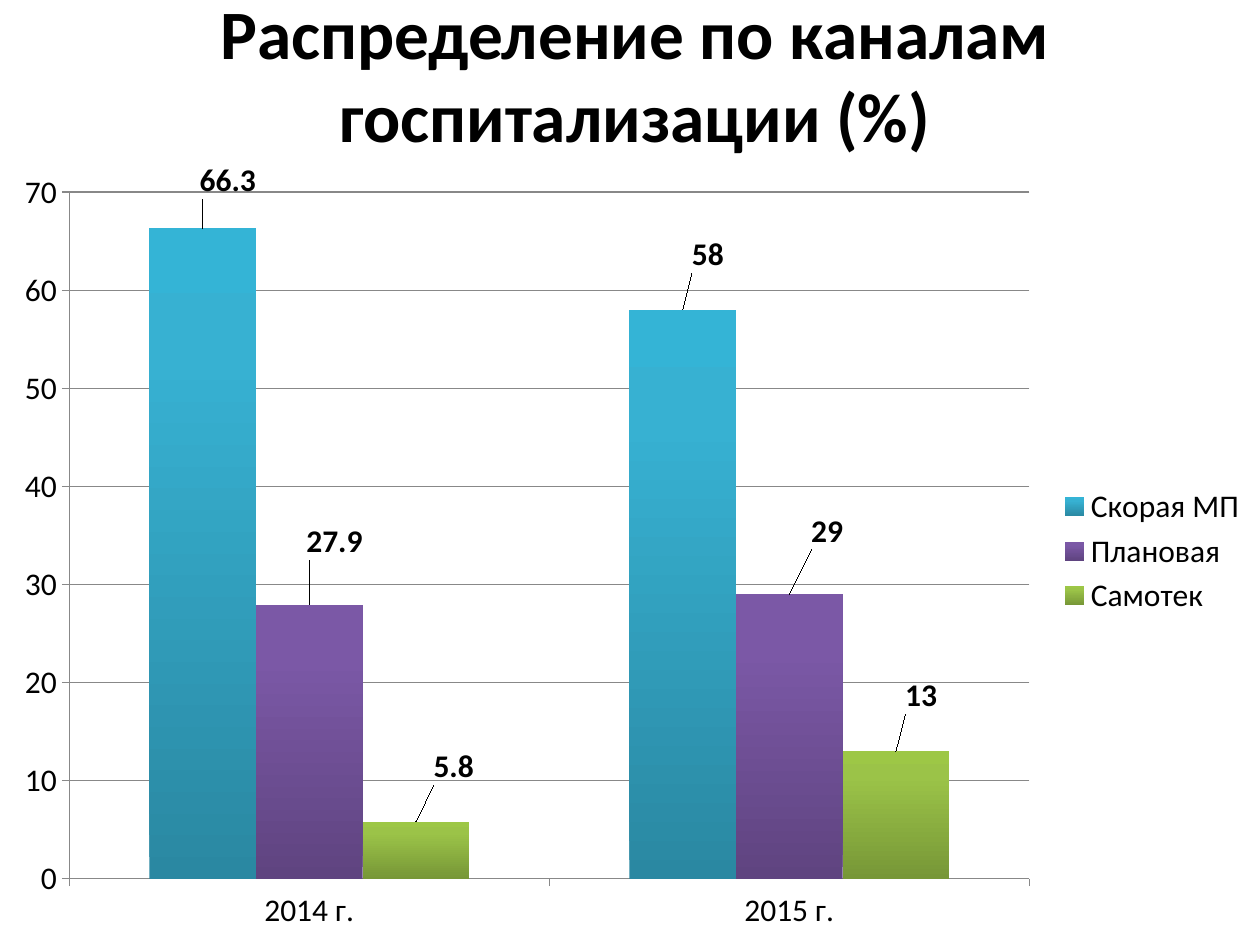
"""Build a slide with a clustered column chart of hospital admission channels."""
import copy
import pptx
import pptx.util
import pptx.chart.data
import pptx.dml.color
import pptx.enum.chart
import pptx.enum.text
import pptx.oxml
import pptx.oxml.ns

WIDE, HIGH = 10, 7.5
FONT = "Calibri"
TITLE = "Распределение по каналам госпитализации (%)"
YEARS = ["2014 г.", "2015 г."]
STOPS = [0, 0.8, 1]
SERIES = [
    {"name": "Скорая МП", "vals": [66.3, 58],
     "fill": ["2A88A2", "37B1D2", "34B4D6"],
     "shift": [(0.02, -0.03), (0.02, -0.04)]},
    {"name": "Плановая", "vals": [27.9, 29],
     "fill": ["5F4480", "7B58A6", "7C57A8"],
     "shift": [(0.02, -0.05), (0.03, -0.05)]},
    {"name": "Самотек", "vals": [5.8, 13],
     "fill": ["779737", "9BC348", "9DC746"],
     "shift": [(0.03, -0.04), (0.02, -0.04)]},
]
PLOT = {"layoutTarget": "inner", "xMode": "edge", "yMode": "edge",
        "x": 0.055, "y": 0.044, "w": 0.762, "h": 0.872}


def color(code):
    """Turn a hex string into a colour."""
    return pptx.dml.color.RGBColor.from_string(code)


def inches(*sizes):
    """Turn numbers into lengths."""
    return [pptx.util.Inches(size) for size in sizes]


def style(font, size, bold=False):
    """Set the face, size, weight and colour of a font."""
    font.name, font.size, font.bold = FONT, pptx.util.Pt(size), bold
    font.color.rgb = color("000000")


def layout(parts):
    """Make a manual chart layout element."""
    space = pptx.oxml.ns.nsdecls("c")
    body = "".join(f'<c:{key} val="{val}"/>' for key, val in parts.items())
    return pptx.oxml.parse_xml(
        f"<c:layout {space}><c:manualLayout>{body}</c:manualLayout></c:layout>")


def shade(series, codes):
    """Fill a series with an upward gradient."""
    fill = series.format.fill
    fill.gradient()
    fill.gradient_angle = 90
    first = next(series._element.iter(pptx.oxml.ns.qn("a:gs")))
    first.addnext(copy.deepcopy(first))
    for stop, place, code in zip(fill.gradient_stops, STOPS, codes):
        stop.position = place
        stop.color.rgb = color(code)


def label(series, shifts):
    """Show bold values, each moved from its usual place."""
    labels = series.data_labels
    labels.show_value = True
    style(labels.font, 18, True)
    for index, (x, y) in enumerate(shifts):
        tag = series.points[index].data_label
        style(tag.font, 18, True)
        tag.position = pptx.enum.chart.XL_LABEL_POSITION.OUTSIDE_END
        node = series._element.findall(".//" + pptx.oxml.ns.qn("c:dLbl"))[index]
        node.insert(1, layout({"x": x, "y": y}))


def add_title(slide):
    """Add the heading."""
    frame = slide.shapes.add_textbox(*inches(0.25, 0, 9.58, 1.17)).text_frame
    frame.word_wrap = True
    frame.vertical_anchor = pptx.enum.text.MSO_ANCHOR.MIDDLE
    para = frame.paragraphs[0]
    para.text = TITLE
    para.alignment = pptx.enum.text.PP_ALIGN.CENTER
    style(para.font, 39.6, True)


def add_columns(slide):
    """Add the column chart."""
    data = pptx.chart.data.CategoryChartData()
    data.categories = YEARS
    for item in SERIES:
        data.add_series(item["name"], item["vals"])
    top = HIGH / 6
    top = 1.25
    chart = slide.shapes.add_chart(
        pptx.enum.chart.XL_CHART_TYPE.COLUMN_CLUSTERED,
        *inches(0, top, WIDE, HIGH - top), data).chart
    style(chart.font, 18)
    chart.has_title = False
    chart.has_legend = True
    chart.legend.position = pptx.enum.chart.XL_LEGEND_POSITION.RIGHT
    chart.legend.include_in_layout = False
    plot = chart.plots[0]
    plot.gap_width, plot.overlap, plot.vary_by_categories = 150, 0, False
    area = chart._chartSpace.chart.plotArea
    for old in area.findall(pptx.oxml.ns.qn("c:layout")):
        area.remove(old)
    area.insert(0, layout(PLOT))
    value = chart.value_axis
    value.minimum_scale, value.maximum_scale, value.major_unit = 0, 70, 10
    value.has_major_gridlines = True
    for part in (value, chart.category_axis, value.major_gridlines):
        part.format.line.color.rgb = color("888888")
        part.format.line.width = pptx.util.Pt(0.75)
    for axis in (value, chart.category_axis):
        axis.major_tick_mark = pptx.enum.chart.XL_TICK_MARK.OUTSIDE
    for series, item in zip(plot.series, SERIES):
        shade(series, item["fill"])
        label(series, item["shift"])


def main():
    """Make and save the deck."""
    deck = pptx.Presentation()
    deck.slide_width, deck.slide_height = inches(WIDE, HIGH)
    slide = deck.slides.add_slide(deck.slide_layouts[6])
    add_title(slide)
    add_columns(slide)
    deck.save("out.pptx")


if __name__ == "__main__":
    main()
